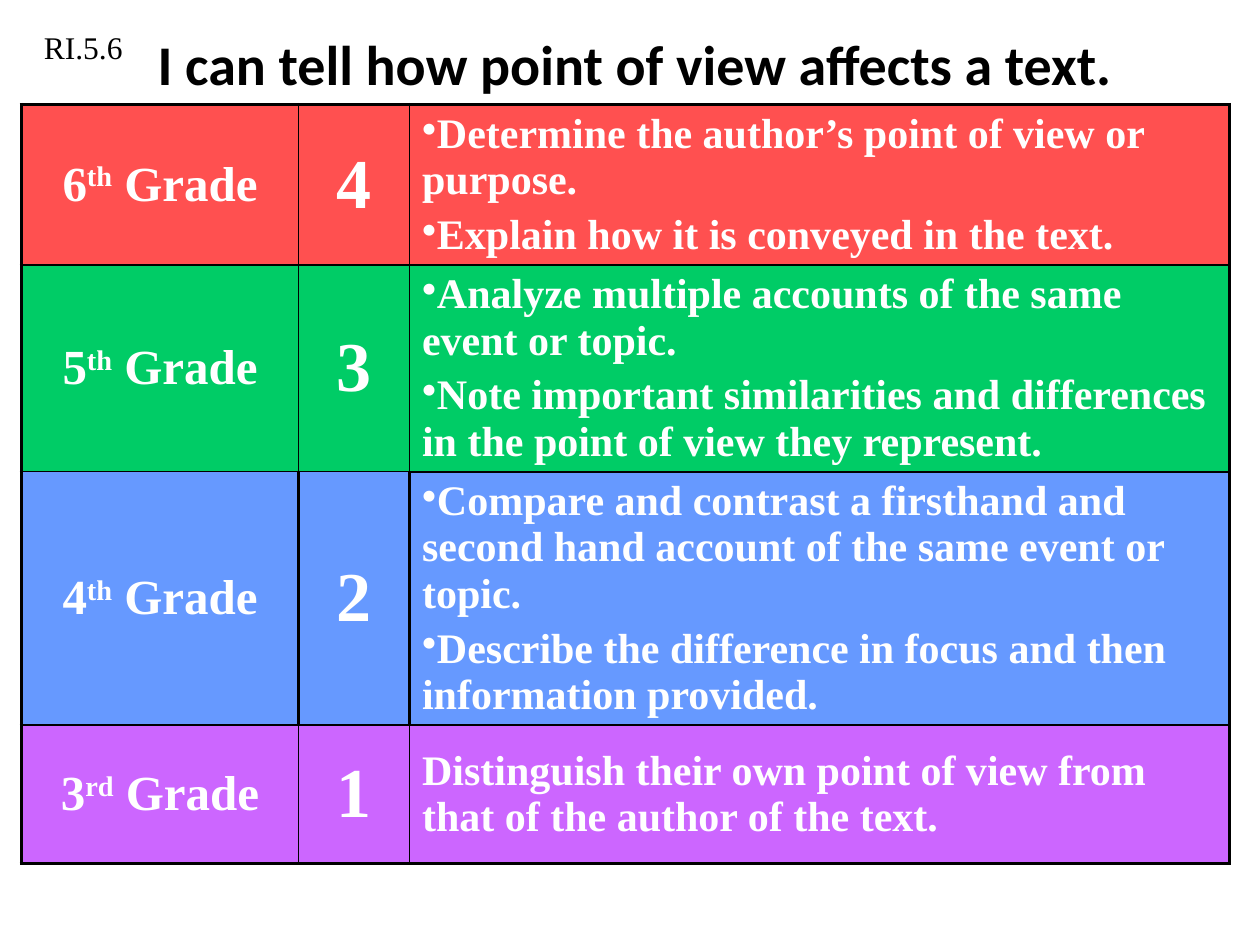
from lxml.etree import SubElement
from pptx import Presentation
from pptx.dml.color import RGBColor
from pptx.enum.text import MSO_ANCHOR as Anchor, PP_ALIGN as Align
from pptx.oxml.ns import qn
from pptx.util import Inches, Pt

COLORS = {
    "ink": "000000", "white": "FFFFFF",
    "6": "FF5050", "5": "00CC66", "4": "6699FF", "3": "CC66FF",
}
SERIF = "Times New Roman"
LEVELS = [
    ("6", "th", "4", ["Determine the author’s point of view or purpose.",
                      "Explain how it is conveyed in the text."]),
    ("5", "th", "3", ["Analyze multiple accounts of the same event or topic.",
                      "Note important similarities and differences in the point of view they represent."]),
    ("4", "th", "2", ["Compare and contrast a firsthand and second hand account of the same event or topic.",
                      "Describe the difference in focus and then information provided."]),
    ("3", "rd", "1", ["Distinguish their own point of view from that of the author of the text."]),
]
COLUMN_WIDTHS = [2.2, 0.88, 6.51]
ROW_HEIGHTS = [1.1, 1.3, 1.1, 1.1]
GRADE_RULES = [2.25, 1.5, 1, 1, 1.5]
DETAIL_RULES = [2.25, 1.5, 1.5, 1.5, 1.5]
INNER_RULES = [1, 1, 1.5, 1]


def rgb(name):
    """Look up a palette colour."""
    return RGBColor.from_string(COLORS[name])


def style(paragraph, size, face, color, bold=False, align=Align.LEFT):
    """Set the font and alignment of a paragraph."""
    font = paragraph.font
    font.size, font.name, font.bold = Pt(size), face, bold
    font.color.rgb = rgb(color)
    paragraph.alignment = align


def format_cell_paragraph(paragraph, size, align, bulleted=False):
    """Style a table paragraph with a 20% gap above and an optional bullet."""
    style(paragraph, size, SERIF, "white", True, align)
    paragraph.space_before = Pt(0)
    props = paragraph._p.get_or_add_pPr()
    gap = props.find(qn("a:spcBef"))
    gap.clear()
    SubElement(gap, qn("a:spcPct"), val="20000")
    props.set("marL", "0")
    props.set("indent", "0")
    if bulleted:
        gap.addnext(props.makeelement(qn("a:buChar"), {"char": "•"}))


def add_borders(cell, left, right, top, bottom):
    """Draw the four cell borders in points."""
    props = cell._tc.get_or_add_tcPr()
    for side, width in zip("LRTB", (left, right, top, bottom)):
        line = SubElement(props, qn(f"a:ln{side}"), w=str(Pt(width)))
        fill = SubElement(line, qn("a:solidFill"))
        SubElement(fill, qn("a:srgbClr"), val=COLORS["ink"])


def write_grade(cell, grade, ordinal):
    """Write a grade with its ordinal raised."""
    paragraph = cell.text_frame.paragraphs[0]
    for text in (grade, ordinal, " Grade"):
        run = paragraph.add_run()
        run.text = text
        if text == ordinal:
            run.font._element.set("baseline", "30000")
    format_cell_paragraph(paragraph, 28, Align.CENTER)


def write_skills(cell, skills):
    """Write the skills, bulleted when there are several."""
    cell.text = "\n".join(skills)
    for paragraph in cell.text_frame.paragraphs:
        format_cell_paragraph(paragraph, 24, Align.LEFT, len(skills) > 1)


def add_title(slide, left, top, width, height):
    """Place the learning goal in the title placeholder."""
    title = slide.shapes.title
    title.left, title.top, title.width, title.height = left, top, width, height
    title.text_frame.text = "I can tell how point of view affects a text."
    title.text_frame.vertical_anchor = Anchor.MIDDLE
    style(title.text_frame.paragraphs[0], 32, "Calibri", "ink", True, Align.CENTER)


def add_scale(slide, left, top, width, height):
    """Build the table of grades, scores and skills."""
    frame = slide.shapes.add_table(len(LEVELS), len(COLUMN_WIDTHS), left, top, width, height)
    scale = frame.table
    scale.first_row = scale.horz_banding = False
    for column, column_width in zip(scale.columns, COLUMN_WIDTHS):
        column.width = Inches(column_width)
    for row, row_height in zip(scale.rows, ROW_HEIGHTS):
        row.height = Inches(row_height)
    frame.height = height
    for index, (grade, ordinal, score, skills) in enumerate(LEVELS):
        cells = scale.rows[index].cells
        write_grade(cells[0], grade, ordinal)
        cells[1].text = score
        format_cell_paragraph(cells[1].text_frame.paragraphs[0], 40, Align.CENTER)
        write_skills(cells[2], skills)
        inner = INNER_RULES[index]
        uprights = [2.25, inner, inner, 2.25]
        for position, cell in enumerate(cells):
            rules = DETAIL_RULES if position == 2 else GRADE_RULES
            add_borders(cell, *uprights[position:position + 2], *rules[index:index + 2])
            cell.vertical_anchor = Anchor.MIDDLE
            cell.fill.solid()
            cell.fill.fore_color.rgb = rgb(grade)


def add_standard(slide, left, top, width, height):
    """Place the code of the standard."""
    standard = slide.shapes.add_textbox(left, top, width, height).text_frame
    standard.word_wrap = True
    standard.text = "RI.5.6"
    style(standard.paragraphs[0], 18, SERIF, "ink")


def main():
    """Build and save the slide."""
    deck = Presentation()
    deck.slide_width, deck.slide_height = Inches(10), Inches(7.5)
    slide = deck.slides.add_slide(deck.slide_layouts[5])
    add_title(slide, Inches(0.33), Inches(0), Inches(9.42), Inches(1))
    add_scale(slide, Inches(0.17), Inches(0.83), Inches(9.58), Inches(6.44))
    add_standard(slide, Inches(0.25), Inches(0.17), Inches(1.42), Inches(0.4))
    deck.save("out.pptx")


if __name__ == "__main__":
    main()
